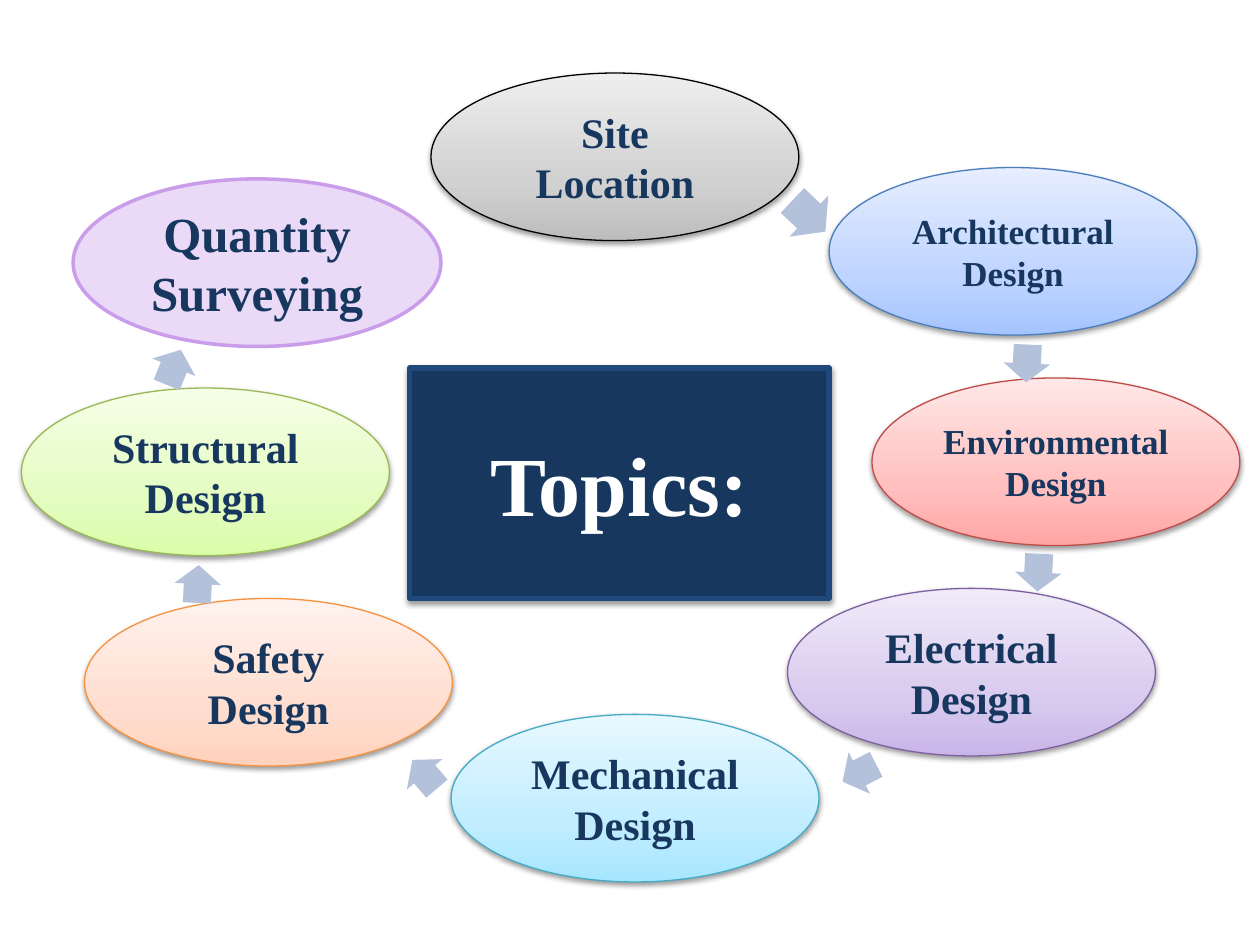
"""Build the ring of design topics around the central title."""
from dataclasses import dataclass

from lxml.etree import SubElement
from pptx import Presentation
from pptx.dml.color import RGBColor
from pptx.enum.shapes import MSO_SHAPE
from pptx.enum.text import MSO_ANCHOR, PP_ALIGN
from pptx.oxml import parse_xml
from pptx.oxml.ns import nsdecls, qn
from pptx.util import Inches, Pt


@dataclass(frozen=True)
class Theme:
    font: str = "Times New Roman"
    navy: str = "17375E"
    white: str = "FFFFFF"
    title_border: str = "1F497D"
    arrow: str = "B3C1DB"
    shadow: str = "000000"
    title_size: int = 48
    large: int = 28
    medium: int = 24
    small: int = 20


@dataclass(frozen=True)
class Topic:
    label: str
    left: float
    top: float
    size: int
    border: str
    fills: tuple[str, ...]
    border_width: float = 0.75
    shadowed: bool = True


@dataclass(frozen=True)
class Arrow:
    left: float
    top: float
    rotation: float
    width: float = 0.3
    height: float = 0.37


THEME = Theme()
TOPIC_WIDTH, TOPIC_HEIGHT = 2.92, 1.33
GRADIENT_STOPS = (0, 35000, 100000)
TEXT_FRAME_FORMAT = {
    "word_wrap": True,
    "vertical_anchor": MSO_ANCHOR.MIDDLE,
    "margin_left": Inches(0.12),
    "margin_right": Inches(0.12),
}

TOPICS = (
    Topic("Site Location", 3.42, 0.58, THEME.medium, "000000", ("BDBDBD", "D1D1D1", "EEEEEE")),
    Topic("Architectural Design", 6.58, 1.33, THEME.small, "4B7EBC", ("A4C4FF", "BFD4FF", "E6EEFF")),
    Topic("Environmental Design", 6.92, 3, THEME.small, "BF4C48", ("FFA6A5", "FFC0BF", "FFE7E7")),
    Topic("Electrical Design", 6.25, 4.67, THEME.medium, "7D60A0", ("C9B5E8", "D8CBEE", "F0EAF9")),
    Topic("Mechanical Design", 3.58, 5.67, THEME.medium, "46AAC5", ("A7E6FF", "C1EDFF", "E7F8FF")),
    Topic("Safety Design", 0.67, 4.75, THEME.medium, "F69240", ("FFD2BD", "FFDED0", "FFF2ED")),
    Topic("Structural Design", 0.17, 3.08, THEME.medium, "98B955", ("DAFDA7", "E4FCC2", "F5FFE7")),
    Topic("Quantity Surveying", 0.58, 1.42, THEME.large, "CA9DEB", ("EAD9F7",), 2, False),
)

ARROWS = (
    Arrow(6.24, 1.49, 43.3, 0.36, 0.45),
    Arrow(8, 2.7, 92.7),
    Arrow(8.09, 4.36, 92.7),
    Arrow(6.67, 5.95, 152.7),
    Arrow(3.22, 5.96, 229.5),
    Arrow(1.42, 4.45, 272.8),
    Arrow(1.23, 2.73, 292.1),
)


def apply_format(target, values: dict) -> None:
    for attribute, value in values.items():
        setattr(target, attribute, value)


def paint_fill(shape, colours: tuple[str, ...]) -> None:
    if len(colours) == 1:
        shape.fill.solid()
        shape.fill.fore_color.rgb = RGBColor.from_string(colours[0])
        return
    shape.fill.gradient()
    gradient = shape._element.spPr.find(qn("a:gradFill"))
    stops = "".join(
        f'<a:gs pos="{position}"><a:srgbClr val="{colour}"/></a:gs>'
        for position, colour in zip(GRADIENT_STOPS, colours)
    )
    gradient.getparent().replace(gradient, parse_xml(
        f'<a:gradFill {nsdecls("a")} rotWithShape="1"><a:gsLst>{stops}</a:gsLst>'
        '<a:lin ang="16200000" scaled="0"/></a:gradFill>'
    ))


def paint_border(shape, colour: str, width: float) -> None:
    shape.line.color.rgb = RGBColor.from_string(colour)
    shape.line.width = Pt(width)


def cast_shadow(shape) -> None:
    effects = shape._element.spPr.find(qn("a:effectLst"))
    shadow = SubElement(effects, qn("a:outerShdw"), blurRad="40000", dist="20000",
                        dir="5400000", rotWithShape="0")
    colour = SubElement(shadow, qn("a:srgbClr"), val=THEME.shadow)
    SubElement(colour, qn("a:alpha"), val="38000")


def write_label(shape, label: str, size: int, colour: str) -> None:
    apply_format(shape.text_frame, TEXT_FRAME_FORMAT)
    paragraph = shape.text_frame.paragraphs[0]
    paragraph.alignment = PP_ALIGN.CENTER
    run = paragraph.add_run()
    run.text = label
    apply_format(run.font, {"name": THEME.font, "size": Pt(size), "bold": True})
    run.font.color.rgb = RGBColor.from_string(colour)


def style_ellipse(shape, topic: Topic, text_colour: str) -> None:
    paint_fill(shape, topic.fills)
    paint_border(shape, topic.border, topic.border_width)
    shape.shadow.inherit = False
    if topic.shadowed:
        cast_shadow(shape)
    write_label(shape, topic.label, topic.size, text_colour)


def draw_topic(slide, topic: Topic) -> None:
    ellipse = slide.shapes.add_shape(
        MSO_SHAPE.OVAL, Inches(topic.left), Inches(topic.top),
        Inches(TOPIC_WIDTH), Inches(TOPIC_HEIGHT))
    style_ellipse(ellipse, topic, THEME.navy)


def draw_title(slide) -> None:
    heading = Topic("Topics:", 3.25, 2.92, THEME.title_size, THEME.title_border, (THEME.navy,), 3)
    title = slide.shapes.title
    apply_format(title, {
        "left": Inches(heading.left), "top": Inches(heading.top),
        "width": Inches(3.33), "height": Inches(1.83),
    })
    title._element.spPr.append(parse_xml(
        f'<a:prstGeom {nsdecls("a")} prst="ellipse"><a:avLst/></a:prstGeom>'))
    style_ellipse(title, heading, THEME.white)


def draw_arrow(slide, arrow: Arrow) -> None:
    pointer = slide.shapes.add_shape(
        MSO_SHAPE.RIGHT_ARROW, Inches(arrow.left), Inches(arrow.top),
        Inches(arrow.width), Inches(arrow.height))
    pointer.rotation = arrow.rotation
    pointer.adjustments[0] = 0.6
    pointer.adjustments[1] = 0.5
    paint_fill(pointer, (THEME.arrow,))
    pointer.line.fill.background()
    pointer.shadow.inherit = False


def main() -> None:
    presentation = Presentation()
    apply_format(presentation, {"slide_width": Inches(10), "slide_height": Inches(7.5)})
    slide = presentation.slides.add_slide(presentation.slide_layouts[5])
    draw_title(slide)
    for topic in TOPICS:
        draw_topic(slide, topic)
    for arrow in ARROWS:
        draw_arrow(slide, arrow)
    presentation.save("out.pptx")


if __name__ == "__main__":
    main()
